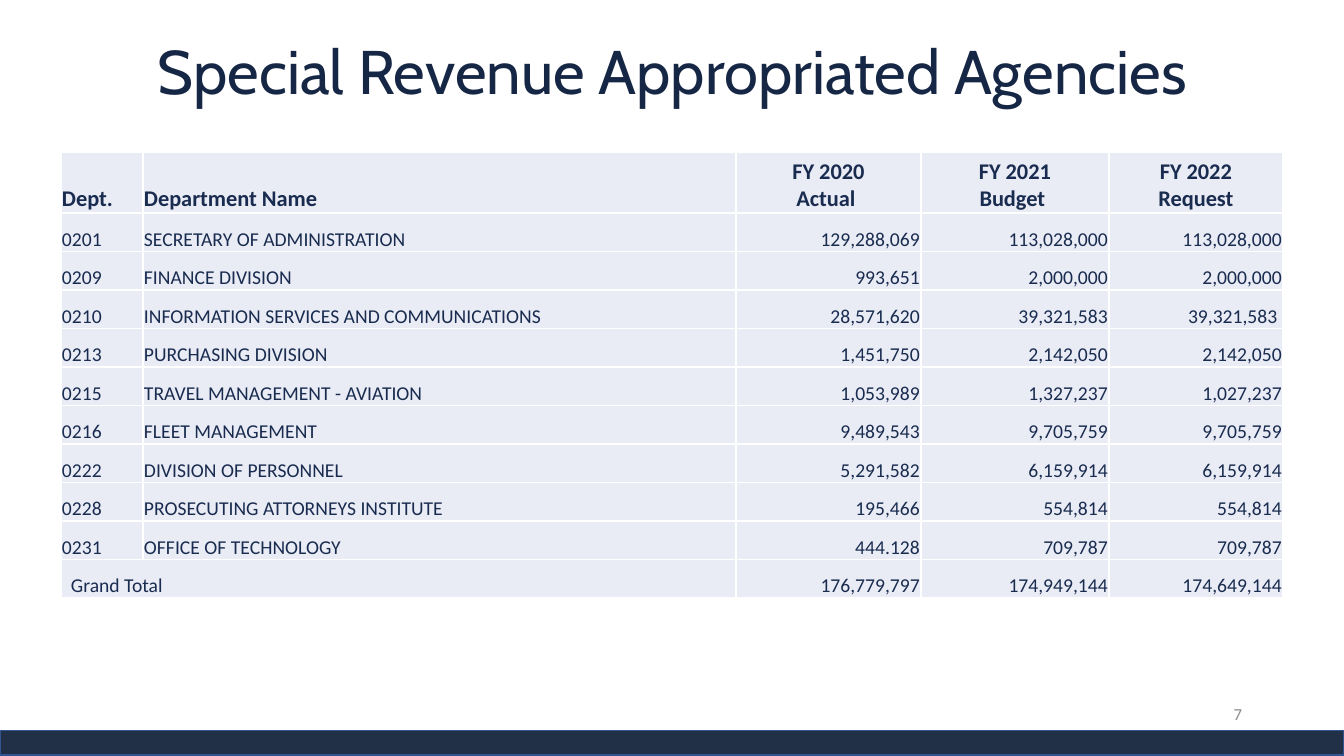
import dataclasses
import pptx
import pptx.dml.color
import pptx.enum.shapes
import pptx.enum.text
import pptx.oxml
import pptx.oxml.ns
import pptx.util

ALIGN = pptx.enum.text.PP_ALIGN
ANCHOR = pptx.enum.text.MSO_ANCHOR


@dataclasses.dataclass(frozen=True)
class Theme:
    title_font: str = "Cabin"
    body_font: str = "Calibri"
    title: str = "162746"
    text: str = "192C4F"
    cell: str = "E9EBF5"
    white: str = "FFFFFF"
    bar: str = "212F47"
    bar_line: str = "325491"
    number: str = "8C8C8C"
    title_size: int = 44
    header_size: int = 16
    body_size: int = 14
    number_size: int = 12


THEME = Theme()
COLUMNS = (82, 593, 185, 188, 174)
HEADER_HEIGHT = 61
BODY_HEIGHT = 385
ROWS = (
    ("Dept.", "Department Name", " FY 2020 \nActual ", "FY 2021\nBudget ", "FY 2022\nRequest"),
    ("0201", "SECRETARY OF ADMINISTRATION", "129,288,069", "113,028,000", "113,028,000"),
    ("0209", "FINANCE DIVISION", "993,651", "2,000,000", "2,000,000"),
    ("0210", "INFORMATION SERVICES AND COMMUNICATIONS", "28,571,620", "39,321,583", "39,321,583 "),
    ("0213", "PURCHASING DIVISION", "1,451,750", "2,142,050", "2,142,050"),
    ("0215", "TRAVEL MANAGEMENT - AVIATION", "1,053,989", "1,327,237", "1,027,237"),
    ("0216", "FLEET MANAGEMENT", "9,489,543", "9,705,759", "9,705,759"),
    ("0222", "DIVISION OF PERSONNEL", "5,291,582", "6,159,914", "6,159,914"),
    ("0228", "PROSECUTING ATTORNEYS INSTITUTE", "195,466", "554,814", "554,814"),
    ("0231", "OFFICE OF TECHNOLOGY", "444.128", "709,787", "709,787"),
    ("Grand Total", "", "176,779,797", "174,949,144", "174,649,144"),
)


def px(n):
    return pptx.util.Emu(round(n * 914400 / 100.8))


def rgb(color):
    return pptx.dml.color.RGBColor.from_string(color)


def write(tf, text, *, size, color, font=THEME.body_font, bold=False, align=ALIGN.LEFT, spacing=1.0):
    for i, line in enumerate(text.split("\n")):
        p = tf.paragraphs[0] if i == 0 else tf.add_paragraph()
        p.alignment = align
        p.line_spacing = spacing
        r = p.add_run()
        r.text = line
        r.font.name = font
        r.font.size = pptx.util.Pt(size)
        r.font.bold = bold
        r.font.color.rgb = rgb(color)


def add_title(s, text):
    sp = s.shapes.title
    sp.left, sp.top, sp.width, sp.height = px(93), px(12), px(1159), px(126)
    tf = sp.text_frame
    tf.vertical_anchor = ANCHOR.MIDDLE
    tf.auto_size = pptx.enum.text.MSO_AUTO_SIZE.NONE
    write(tf, text, size=THEME.title_size, color=THEME.title, font=THEME.title_font,
          align=ALIGN.CENTER, spacing=0.9)


def add_bar(s, top, height, fill, line=None):
    sp = s.shapes.add_shape(pptx.enum.shapes.MSO_SHAPE.RECTANGLE, 0, px(top), px(1344), px(height))
    sp.shadow.inherit = False
    sp.fill.solid()
    sp.fill.fore_color.rgb = rgb(fill)
    if line:
        sp.line.color.rgb = rgb(line)
        sp.line.width = pptx.util.Pt(1)
    else:
        sp.line.fill.background()


def format_cell(cell):
    cell.margin_left = cell.margin_right = cell.margin_top = px(1)
    cell.margin_bottom = 0
    cell.vertical_anchor = ANCHOR.BOTTOM
    tc_pr = cell._tc.get_or_add_tcPr()
    for side in "LRTB":
        tc_pr.append(pptx.oxml.parse_xml(
            f'<a:ln{side} {pptx.oxml.ns.nsdecls("a")} w="12700"><a:solidFill>'
            f'<a:srgbClr val="{THEME.white}"/></a:solidFill></a:ln{side}>'))
    cell.fill.solid()
    cell.fill.fore_color.rgb = rgb(THEME.cell)


def add_revenue_table(s):
    table = s.shapes.add_table(len(ROWS), len(COLUMNS), px(61), px(152), px(sum(COLUMNS)),
                               px(HEADER_HEIGHT + BODY_HEIGHT)).table
    table.first_row = table.horz_banding = False
    for column, width in zip(table.columns, COLUMNS):
        column.width = px(width)
    for i, values in enumerate(ROWS):
        header = i == 0
        table.rows[i].height = px(HEADER_HEIGHT if header else BODY_HEIGHT / (len(ROWS) - 1))
        for j, value in enumerate(values):
            cell = table.cell(i, j)
            format_cell(cell)
            if value:
                number_align = ALIGN.CENTER if header else ALIGN.RIGHT
                write(cell.text_frame, value, color=THEME.text, bold=header,
                      size=THEME.header_size if header else THEME.body_size,
                      align=ALIGN.LEFT if j < 2 else number_align)
    total = table.cell(len(ROWS) - 1, 0)
    total.merge(table.cell(len(ROWS) - 1, 1))
    total.margin_left = px(10)


def add_page_number(s, text):
    tf = s.shapes.add_textbox(px(950), px(694), px(302), px(40)).text_frame
    tf.word_wrap = True
    tf.vertical_anchor = ANCHOR.MIDDLE
    write(tf, text, size=THEME.number_size, color=THEME.number, align=ALIGN.RIGHT)


def main():
    prs = pptx.Presentation()
    prs.slide_width, prs.slide_height = px(1344), px(756)
    s = prs.slides.add_slide(prs.slide_layouts[5])
    add_title(s, "Special Revenue Appropriated Agencies")
    add_bar(s, 730, 25, THEME.bar, THEME.bar_line)
    add_bar(s, 725, 5, THEME.white)
    add_revenue_table(s)
    add_page_number(s, "7")
    prs.save("out.pptx")


if __name__ == "__main__":
    main()
